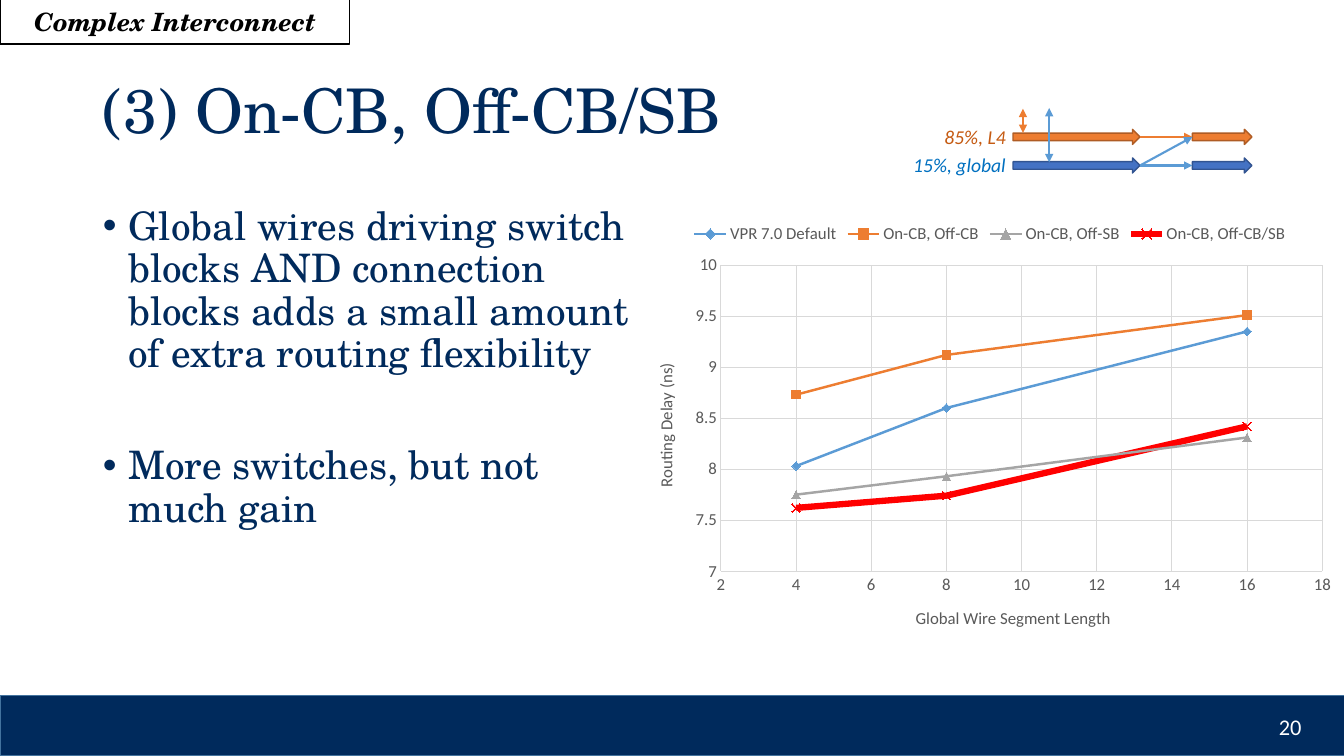
from dataclasses import dataclass

import pptx
import pptx.chart.data
import pptx.dml.color
import pptx.enum.chart
import pptx.enum.shapes
import pptx.enum.text
import pptx.oxml
import pptx.oxml.ns
import pptx.util
from pptx.util import Cm, Pt

PRESET = pptx.enum.shapes.MSO_SHAPE
ALIGN = pptx.enum.text.PP_ALIGN
ANCHOR = pptx.enum.text.MSO_ANCHOR
MARKER = pptx.enum.chart.XL_MARKER_STYLE
qn = pptx.oxml.ns.qn
rgb = pptx.dml.color.RGBColor.from_string


@dataclass(frozen=True)
class Theme:
    serif: str = "TeX Gyre Schola"
    sans: str = "Calibri"
    navy: str = "002A5C"
    footer_edge: str = "43739E"
    white: str = "FFFFFF"
    black: str = "000000"
    orange: str = "ED7D31"
    orange_edge: str = "AF5C24"
    orange_text: str = "C55A11"
    blue: str = "4472C4"
    blue_edge: str = "325491"
    blue_text: str = "0070C0"
    light_blue: str = "5B9BD5"
    gray: str = "A5A5A5"
    red: str = "FF0000"
    grid: str = "D9D9D9"
    chart_text: str = "595959"
    title_size: int = 44
    body_size: int = 28
    tag_size: int = 18
    number_size: int = 16
    label_size: int = 14
    chart_size: int = 12


theme = Theme()


def write(para, text, *, size, color, font=theme.sans, bold=False, italic=False, align=ALIGN.LEFT):
    para.alignment = align
    span = para.add_run()
    span.text = text
    span.font.name = font
    span.font.size = Pt(size)
    span.font.bold = bold
    span.font.italic = italic
    span.font.color.rgb = rgb(color)


def add_block(preset, left, top, width, height, fill, edge):
    """Add an outlined preset shape, given in centimetres; fill None leaves it open."""
    block = page.shapes.add_shape(preset, Cm(left), Cm(top), Cm(width), Cm(height))
    block.shadow.inherit = False
    if fill:
        block.fill.solid()
        block.fill.fore_color.rgb = rgb(fill)
    else:
        block.fill.background()
    block.line.color.rgb = rgb(edge)
    block.line.width = Pt(1)
    return block


deck = pptx.Presentation()
deck.slide_width, deck.slide_height = Cm(33.87), Cm(19.05)
page = deck.slides.add_slide(deck.slide_layouts[1])

# Title and bullets
title, body = page.placeholders
title.left, title.top, title.width, title.height = Cm(2.34), Cm(1.02), Cm(29.21), Cm(3.68)
body.left, body.top, body.width, body.height = Cm(2.34), Cm(5.08), Cm(14.02), Cm(12.09)
for box in (title, body):
    box.text_frame.word_wrap = True
    box.text_frame.auto_size = pptx.enum.text.MSO_AUTO_SIZE.NONE
title.text_frame.vertical_anchor = ANCHOR.MIDDLE
heading = title.text_frame.paragraphs[0]
heading.line_spacing = 0.9
write(heading, "(3) On-CB, Off-CB/SB", size=theme.title_size, color=theme.navy, font=theme.serif)

bullets = [
    ("Global wires driving switch blocks AND connection blocks adds a small amount "
     "of extra routing flexibility", 0),
    ("More switches, but not much gain", 50),
]
for index, (text, gap) in enumerate(bullets):
    para = body.text_frame.add_paragraph() if index else body.text_frame.paragraphs[0]
    properties = para._p.get_or_add_pPr()
    properties.set("marL", str(Cm(0.64)))
    properties.set("indent", str(-Cm(0.64)))
    properties.append(pptx.oxml.parse_xml(f'<a:buChar {pptx.oxml.ns.nsdecls("a")} char="•"/>'))
    para.line_spacing = 0.9
    para.space_before = Pt(gap)
    write(para, text, size=theme.body_size, color=theme.navy, font=theme.serif)

# Footer bar with the page number, and the section tag
add_block(PRESET.RECTANGLE, 0, 17.53, 33.91, 1.52, theme.navy, theme.footer_edge)
number = page.shapes.add_textbox(Cm(25.43), Cm(17.81), Cm(7.62), Cm(1.02)).text_frame
number.word_wrap = True
number.vertical_anchor = ANCHOR.MIDDLE
write(number.paragraphs[0], "20", size=theme.number_size, color=theme.white, align=ALIGN.RIGHT)

tag = add_block(PRESET.RECTANGLE, 0, -0.03, 8.81, 1.14, None, theme.black).text_frame
tag.margin_left, tag.margin_right = Cm(0.86), Cm(0)
tag.vertical_anchor = ANCHOR.MIDDLE
write(tag.paragraphs[0], "Complex Interconnect", size=theme.tag_size, color=theme.black,
      font=theme.serif, bold=True, italic=True)

# Routing delay chart
lengths = (4, 8, 16)
series_styles = [
    ("VPR 7.0 Default", (8.03, 8.6, 9.35), theme.light_blue, 1.75, MARKER.DIAMOND),
    ("On-CB, Off-CB", (8.73, 9.12, 9.51), theme.orange, 1.75, MARKER.SQUARE),
    ("On-CB, Off-SB", (7.75, 7.93, 8.31), theme.gray, 1.75, MARKER.TRIANGLE),
    ("On-CB, Off-CB/SB", (7.62, 7.74, 8.42), theme.red, 4.5, MARKER.X),
]
data = pptx.chart.data.XyChartData()
for name, delays, *_ in series_styles:
    series = data.add_series(name)
    for length, delay in zip(lengths, delays):
        series.add_data_point(length, delay)
chart = page.shapes.add_chart(pptx.enum.chart.XL_CHART_TYPE.XY_SCATTER_LINES, Cm(16.03),
                              Cm(5.36), Cm(17.83), Cm(11.02), data).chart
chart.font.name = theme.sans
chart.font.size = Pt(theme.chart_size)
chart.font.color.rgb = rgb(theme.chart_text)
chart.has_title = False
chart.has_legend = True
chart.legend.position = pptx.enum.chart.XL_LEGEND_POSITION.TOP
chart.legend.include_in_layout = False
chart.plots[0].vary_by_categories = False

for series, (_, _, color, width, marker) in zip(chart.plots[0].series, series_styles):
    series.smooth = False
    series.format.line.color.rgb = rgb(color)
    series.format.line.width = Pt(width)
    series.marker.style = marker
    series.marker.size = 6
    series.marker.format.line.color.rgb = rgb(color)
    if marker == MARKER.X:
        series.marker.format.fill.background()
    else:
        series.marker.format.fill.solid()
        series.marker.format.fill.fore_color.rgb = rgb(color)

for axis, name, low, high, step in (
    (chart.category_axis, "Global Wire Segment Length", 2, 18, 2),
    (chart.value_axis, "Routing Delay (ns)", 7, 10, 0.5),
):
    axis.minimum_scale, axis.maximum_scale, axis.major_unit = low, high, step
    axis.major_tick_mark = axis.minor_tick_mark = pptx.enum.chart.XL_TICK_MARK.NONE
    axis.tick_labels.number_format = "General"
    axis.tick_labels.number_format_is_linked = False
    axis.has_major_gridlines = True
    for line in (axis.format.line, axis.major_gridlines.format.line):
        line.color.rgb = rgb(theme.grid)
        line.width = Pt(0.75)
    write(axis.axis_title.text_frame.paragraphs[0], name, size=theme.chart_size,
          color=theme.chart_text, align=ALIGN.CENTER)

plot_area = chart.element.find(".//" + qn("c:plotArea"))
for layout in plot_area.findall(qn("c:layout")):
    plot_area.remove(layout)
plot_area.insert(0, pptx.oxml.parse_xml(
    f'<c:layout {pptx.oxml.ns.nsdecls("c")}><c:manualLayout><c:layoutTarget val="inner"/>'
    '<c:xMode val="edge"/><c:yMode val="edge"/><c:x val="0.12"/><c:y val="0.12"/>'
    '<c:w val="0.85"/><c:h val="0.7"/></c:manualLayout></c:layout>'))

# Wire diagram: one row for each wire type
local_row, global_row = 3.45, 4.17
wire_start, wire_end, next_wire = 25.53, 28.73, 30.05
for row, text, fill, edge, color in (
    (local_row, "85%, L4", theme.orange, theme.orange_edge, theme.orange_text),
    (global_row, "15%, global", theme.blue, theme.blue_edge, theme.blue_text),
):
    for left, width in ((wire_start, wire_end - wire_start), (next_wire, 1.5)):
        add_block(PRESET.RIGHT_ARROW, left, row - 0.19, width, 0.38, fill, edge)
    label = page.shapes.add_textbox(Cm(21.74), Cm(row - 0.43), Cm(3.86), Cm(0.86)).text_frame
    label.word_wrap = True
    write(label.paragraphs[0], text, size=theme.label_size, color=color, italic=True,
          align=ALIGN.RIGHT)

for x1, y1, x2, y2, color, width, ends in (
    (25.78, 2.74, 25.78, 3.35, theme.orange, 1, ("headEnd", "tailEnd")),
    (26.44, 2.72, 26.44, 4.09, theme.light_blue, 1.5, ("headEnd", "tailEnd")),
    (wire_end, global_row, next_wire, global_row, theme.light_blue, 1.5, ("tailEnd",)),
    (wire_end, local_row, next_wire, local_row, theme.orange, 1.5, ("tailEnd",)),
    (wire_end, global_row, next_wire, local_row, theme.light_blue, 1.5, ("tailEnd",)),
):
    switch = page.shapes.add_connector(pptx.enum.shapes.MSO_CONNECTOR.STRAIGHT,
                                       Cm(x1), Cm(y1), Cm(x2), Cm(y2))
    switch.line.color.rgb = rgb(color)
    switch.line.width = Pt(width)
    properties = switch.element.spPr
    for end in ends:
        properties.find(qn("a:ln")).append(pptx.oxml.parse_xml(
            f'<a:{end} {pptx.oxml.ns.nsdecls("a")} type="triangle"/>'))
    properties.append(pptx.oxml.parse_xml(f'<a:effectLst {pptx.oxml.ns.nsdecls("a")}/>'))

deck.save("out.pptx")
